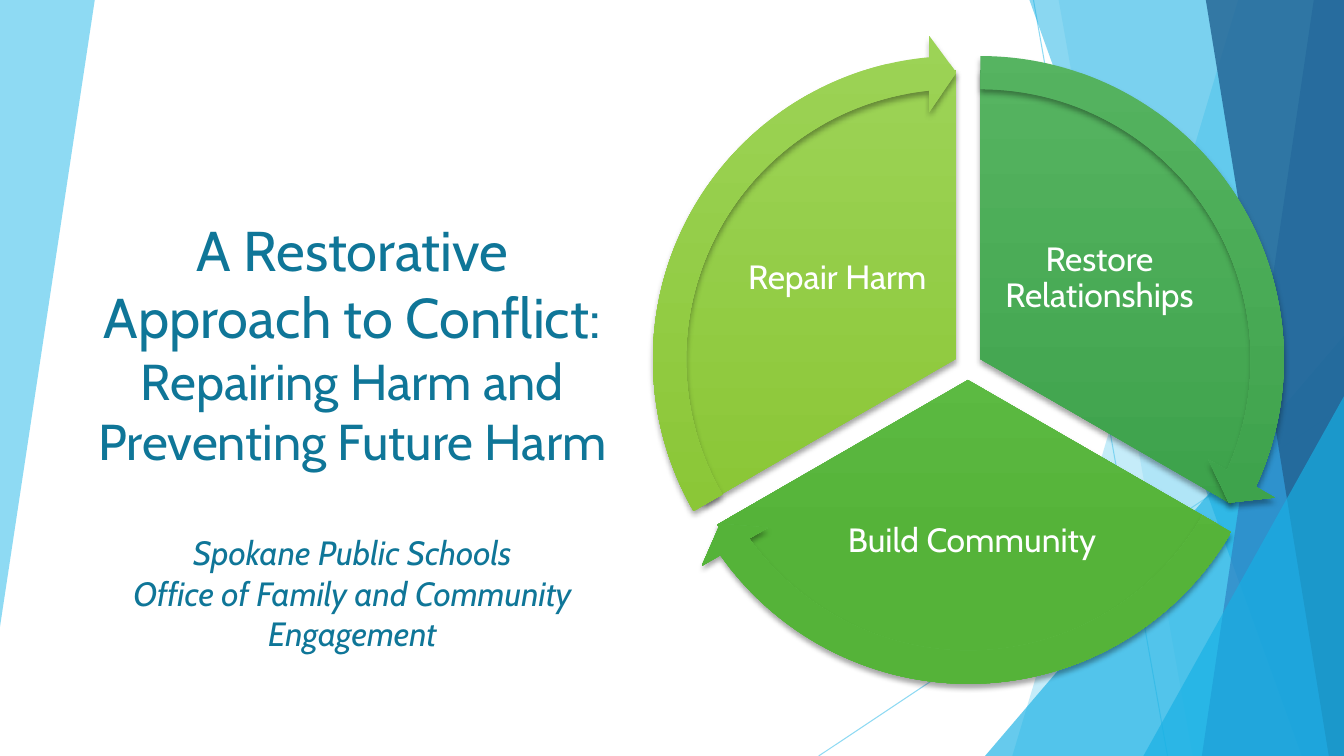
from lxml.etree import SubElement
from pptx import Presentation
from pptx.dml.color import RGBColor
from pptx.enum.shapes import MSO_CONNECTOR, MSO_SHAPE
from pptx.enum.text import MSO_ANCHOR, PP_ALIGN
from pptx.oxml.ns import qn
from pptx.util import Inches, Pt

WHITE = RGBColor(0xFF, 0xFF, 0xFF)
TEAL = RGBColor(0x0F, 0x76, 0x98)
SKY = RGBColor(0x5F, 0xCB, 0xEF)
CYAN = RGBColor(0x17, 0xB0, 0xE4)
BLUE = RGBColor(0x2E, 0x83, 0xC3)
NAVY = RGBColor(0x22, 0x62, 0x92)
GREEN_TOP, GREEN_END = RGBColor(0x56, 0xB4, 0x61), RGBColor(0x3C, 0xA1, 0x4A)
LEAF_TOP, LEAF_END = RGBColor(0x6A, 0xC7, 0x54), RGBColor(0x55, 0xB3, 0x39)
LIME_TOP, LIME_END = RGBColor(0x9C, 0xD3, 0x56), RGBColor(0x8A, 0xC6, 0x35)
FONT = "Cabin"
W, H = 13.33, 7.5


def set_alpha(sp, percent):
    for clr in sp._element.spPr.iter(qn("a:srgbClr")):
        SubElement(clr, qn("a:alpha")).set("val", str(percent * 1000))


def add_cycle_part(kind, left, top, size, adjustments, first, last):
    sp = s.shapes.add_shape(kind, Inches(left), Inches(top), Inches(size), Inches(size))
    for i, value in enumerate(adjustments):
        sp.adjustments[i] = value
    sp.fill.gradient()
    sp.fill.gradient_angle = 270
    for stop, position, color in zip(sp.fill.gradient_stops, (0, 0.78), (first, last)):
        stop.position = position
        stop.color.rgb = color
    sp.line.fill.background()
    sp.shadow.inherit = False
    effects = sp._element.spPr.find(qn("a:effectLst"))
    shadow = SubElement(effects, qn("a:outerShdw"), blurRad=str(Pt(4)), dist=str(Pt(3)),
                        dir="5400000", rotWithShape="0")
    clr = SubElement(shadow, qn("a:srgbClr"), val="000000")
    SubElement(clr, qn("a:alpha"), val="35000")


prs = Presentation()
prs.slide_width, prs.slide_height = Inches(W), Inches(H)
s = prs.slides.add_slide(prs.slide_layouts[6])

facets = [
    ("free", [(0, 0), (0.94, 0), (0, 6.22)], SKY, 70),
    ("line", [(10.25, 0), (11.58, H)], SKY, 70),
    ("line", [(W, 4.03), (8.12, H)], SKY, 70),
    ("free", [(12.28, 0), (W, 0), (W, H), (10.04, H)], SKY, 36),
    ("free", [(10.5, 0), (W, 0), (W, H), (11.83, H)], SKY, 20),
    ("triangle", [(9.77, 3.33)], CYAN, 66),
    ("free", [(10.21, 0), (W, 0), (W, H), (12.91, H)], CYAN, 50),
    ("free", [(13.03, 0), (W, 0), (W, H), (11.92, H)], BLUE, 70),
    ("free", [(11.96, 0), (W, 0), (W, H), (13.18, H)], NAVY, 80),
    ("triangle", [(11.34, 3.93)], CYAN, 66),
]
for kind, points, color, alpha in facets:
    pts = [(Inches(x), Inches(y)) for x, y in points]
    if kind == "line":
        sp = s.shapes.add_connector(MSO_CONNECTOR.STRAIGHT, *pts[0], *pts[1])
        sp.line.color.rgb = color
        sp.line.width = Pt(0.75)
        SubElement(sp._element.spPr, qn("a:effectLst"))
    else:
        if kind == "triangle":
            x, y = pts[0]
            sp = s.shapes.add_shape(MSO_SHAPE.ISOSCELES_TRIANGLE, x, y, Inches(W) - x, Inches(H) - y)
            sp.adjustments[0] = 1
        else:
            builder = s.shapes.build_freeform(*pts[0])
            builder.add_line_segments(pts[1:], close=True)
            sp = builder.convert_to_shape()
        sp.fill.solid()
        sp.fill.fore_color.rgb = color
        sp.line.fill.background()
        sp.shadow.inherit = False
    set_alpha(sp, alpha)

segments = [
    ("Restore Relationships", (6.85, 0.69), (162, 18), (14.725, 161.994),
     (9.88, 1.91, 2.05, 1.71), GREEN_TOP, GREEN_END),
    ("Build Community", (6.73, 0.9), (18, 90), (86.72, 18.005),
     (8.1, 4.62, 3.08, 1.5), LEAF_TOP, LEAF_END),
    ("Repair Harm", (6.61, 0.69), (90, 162), (158.73, 90),
     (7.28, 1.91, 2.05, 1.71), LIME_TOP, LIME_END),
]
for label, (left, top), angles, _, box, first, last in segments:
    add_cycle_part(MSO_SHAPE.PIE, left, top, 5.74, angles, first, last)
    tf = s.shapes.add_textbox(*map(Inches, box)).text_frame
    tf.word_wrap = True
    tf.vertical_anchor = MSO_ANCHOR.MIDDLE
    tf.margin_left = tf.margin_right = tf.margin_top = tf.margin_bottom = Inches(0.03)
    tf.text = label
    p = tf.paragraphs[0]
    p.alignment = PP_ALIGN.CENTER
    p.line_spacing = 0.9
    p.font.size = Pt(24)
    p.font.name = FONT
    p.font.color.rgb = WHITE

for _, (left, top), _, (head, tail), _, first, last in segments:
    add_cycle_part(MSO_SHAPE.CIRCULAR_ARROW, left - 0.35, top - 0.35, 6.45,
                   (0.051, 3.275, head, tail, 0.059), first, last)

tf = s.shapes.add_textbox(Inches(0.76), Inches(1.44), Inches(5.47), Inches(5.09)).text_frame
tf.word_wrap = True
tf.vertical_anchor = MSO_ANCHOR.BOTTOM
title_lines = [
    ("A Restorative Approach to Conflict:", 40, False, 0),
    ("Repairing Harm and Preventing Future Harm", 36, False, 0),
    ("Spokane Public Schools", 24, True, 44),
    ("Office of Family and Community Engagement", 24, True, 0),
]
for i, (text, size, italic, gap) in enumerate(title_lines):
    p = tf.add_paragraph() if i else tf.paragraphs[0]
    p.text = text
    p.alignment = PP_ALIGN.CENTER
    p.space_before = Pt(gap)
    r = p.runs[0]
    r.font.size = Pt(size)
    r.font.name = FONT
    r.font.italic = italic
    r.font.color.rgb = TEAL

prs.save("out.pptx")
